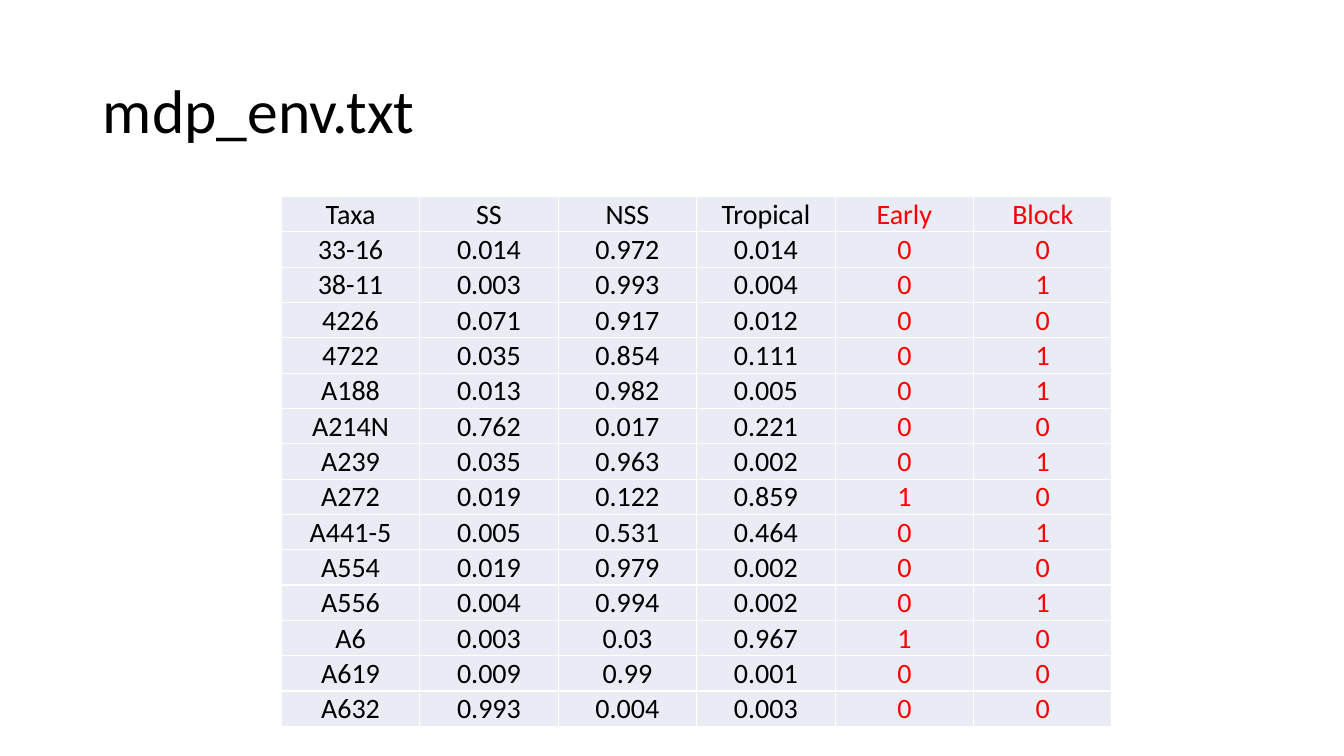
from lxml import etree
from pptx import Presentation
from pptx.dml.color import RGBColor
from pptx.enum import text
from pptx.oxml import ns
from pptx.util import Inches, Pt

TITLE = "mdp_env.txt"
ROWS = [
    ("Taxa", "SS", "NSS", "Tropical", "Early", "Block"),
    ("33-16", "0.014", "0.972", "0.014", "0", "0"),
    ("38-11", "0.003", "0.993", "0.004", "0", "1"),
    ("4226", "0.071", "0.917", "0.012", "0", "0"),
    ("4722", "0.035", "0.854", "0.111", "0", "1"),
    ("A188", "0.013", "0.982", "0.005", "0", "1"),
    ("A214N", "0.762", "0.017", "0.221", "0", "0"),
    ("A239", "0.035", "0.963", "0.002", "0", "1"),
    ("A272", "0.019", "0.122", "0.859", "1", "0"),
    ("A441-5", "0.005", "0.531", "0.464", "0", "1"),
    ("A554", "0.019", "0.979", "0.002", "0", "0"),
    ("A556", "0.004", "0.994", "0.002", "0", "1"),
    ("A6", "0.003", "0.03", "0.967", "1", "0"),
    ("A619", "0.009", "0.99", "0.001", "0", "0"),
    ("A632", "0.993", "0.004", "0.003", "0", "0"),
]
COLUMN_COLORS = ["000000"] * 4 + ["FF0000"] * 2
CELL_FILL = "E9EBF5"
BORDER = "FFFFFF"
FONT = "Calibri"
TABLE_BOX = (2.79, 1.95, 8.24, 5.21)
ROW_HEIGHT = 0.31


def color(value):
    return RGBColor.from_string(value)


def add_run(p, words, size, value):
    r = p.add_run()
    r.text = words
    r.font.name = FONT
    r.font.size = Pt(size)
    r.font.bold = False
    r.font.color.rgb = color(value)


def add_borders(cell):
    tcPr = cell._tc.get_or_add_tcPr()
    for side in ("lnL", "lnR", "lnT", "lnB"):
        ln = etree.SubElement(tcPr, ns.qn(f"a:{side}"), w=str(Pt(1)))
        fill = etree.SubElement(ln, ns.qn("a:solidFill"))
        etree.SubElement(fill, ns.qn("a:srgbClr"), val=BORDER)


def add_title(s):
    sp = s.shapes.title
    sp.left, sp.top, sp.width, sp.height = map(Inches, (0.92, 0.4, 11.5, 1.45))
    tf = sp.text_frame
    tf.word_wrap = True
    tf.auto_size = text.MSO_AUTO_SIZE.NONE
    tf.vertical_anchor = text.MSO_ANCHOR.MIDDLE
    p = tf.paragraphs[0]
    p.alignment = text.PP_ALIGN.LEFT
    p.line_spacing = 0.9
    add_run(p, TITLE, 44, "000000")


def add_cell(cell, words, value):
    add_borders(cell)
    cell.fill.solid()
    cell.fill.fore_color.rgb = color(CELL_FILL)
    cell.margin_left = cell.margin_right = cell.margin_top = Inches(0.01)
    cell.margin_bottom = 0
    cell.vertical_anchor = text.MSO_ANCHOR.BOTTOM
    p = cell.text_frame.paragraphs[0]
    p.alignment = text.PP_ALIGN.CENTER
    add_run(p, words, 20, value)


def add_env_table(s):
    frame = s.shapes.add_table(len(ROWS), len(COLUMN_COLORS), *map(Inches, TABLE_BOX))
    table = frame.table
    table.first_row = False
    table.horz_banding = False
    for i, row in enumerate(ROWS):
        table.rows[i].height = Inches(ROW_HEIGHT)
        for j, words in enumerate(row):
            add_cell(table.cell(i, j), words, COLUMN_COLORS[j])
    frame.height = Inches(TABLE_BOX[3])


def main():
    prs = Presentation()
    prs.slide_width, prs.slide_height = Inches(13.33), Inches(7.5)
    s = prs.slides.add_slide(prs.slide_layouts[5])
    add_title(s)
    add_env_table(s)
    prs.save("out.pptx")


if __name__ == "__main__":
    main()
